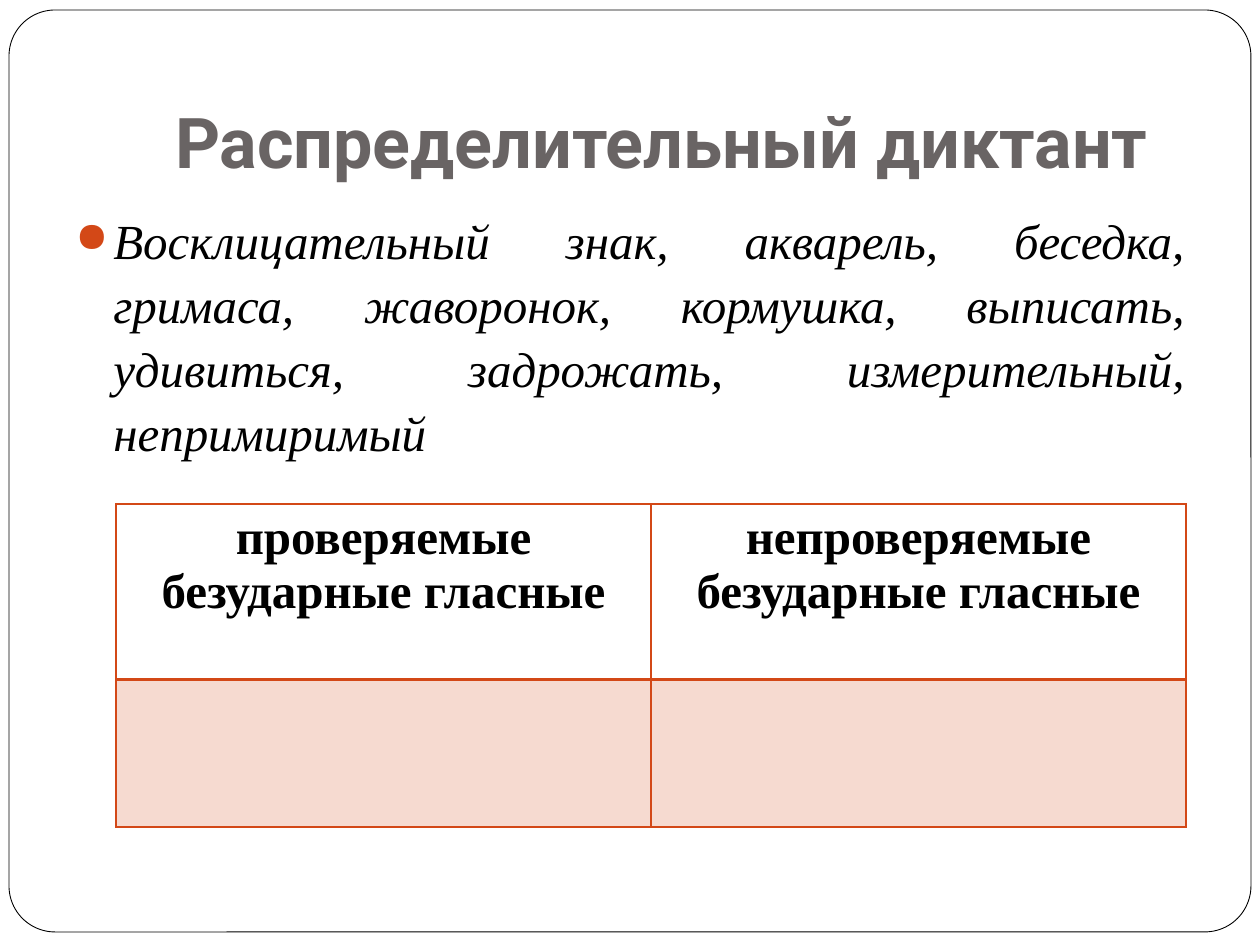
import pptx
import pptx.util
import pptx.dml.color
import pptx.enum.shapes
import pptx.enum.text
import pptx.oxml
import pptx.oxml.ns

TITLE = "Распределительный диктант"
WORDS = ("Восклицательный знак, акварель, беседка, гримаса, жаворонок, "
         "кормушка, выписать, удивиться, задрожать, измерительный, непримиримый")
HEADERS = ["проверяемые безударные гласные", "непроверяемые безударные гласные"]

ACCENT, GREY, BLACK, WHITE = "D34817", "696464", "000000", "FFFFFF"
SERIF = "Times New Roman"
ROW_HEIGHTS = [176, 147]
COLUMN_WIDTH = 535
ALIGN = pptx.enum.text.PP_ALIGN


def px(count):
    return pptx.util.Emu(round(count * 914400 / 126))


def color(value):
    return pptx.dml.color.RGBColor.from_string(value)


def element(tag, content="", **attributes):
    listed = "".join(f' {name}="{value}"' for name, value in attributes.items())
    namespace = pptx.oxml.ns.nsdecls("a")
    return pptx.oxml.parse_xml(f"<a:{tag} {namespace}{listed}>{content}</a:{tag}>")


def write(frame, text, align, size, font, ink, bold=False, italic=False):
    frame.word_wrap = True
    paragraph = frame.paragraphs[0]
    paragraph.alignment = align
    run = paragraph.add_run()
    run.text = text
    run.font.size = pptx.util.Pt(size)
    run.font.name = font
    run.font.color.rgb = color(ink)
    run.font.bold, run.font.italic = bold, italic
    return paragraph


def set_borders(cell, bottom):
    properties = cell._tc.get_or_add_tcPr()
    fill = f'<a:solidFill><a:srgbClr val="{ACCENT}"/></a:solidFill>'
    widths = {"lnL": 1, "lnR": 1, "lnT": 1, "lnB": bottom}
    for position, (side, width) in enumerate(widths.items()):
        properties.insert(position, element(side, fill, w=pptx.util.Pt(width)))


presentation = pptx.Presentation()
presentation.slide_width, presentation.slide_height = px(1260), px(945)
slide = presentation.slides.add_slide(presentation.slide_layouts[6])

# Rounded frame
frame = slide.shapes.add_shape(pptx.enum.shapes.MSO_SHAPE.ROUNDED_RECTANGLE,
                               px(9), px(10), px(1242), px(922))
frame.adjustments[0] = 0.05
frame.shadow.inherit = False
frame.fill.solid()
frame.fill.fore_color.rgb = color(WHITE)
frame.line.color.rgb = color(BLACK)
frame.line.width = pptx.util.Pt(0.5)

# Title
title = slide.shapes.add_textbox(px(126), px(38), px(1071), px(157)).text_frame
title.vertical_anchor = pptx.enum.text.MSO_ANCHOR.BOTTOM
title.margin_bottom = px(13)
write(title, TITLE, ALIGN.CENTER, 40, "Roboto", GREY, bold=True)

# Bulleted words
body = slide.shapes.add_textbox(px(63), px(199), px(1134), px(630)).text_frame
paragraph = write(body, WORDS, ALIGN.JUSTIFY, 28, SERIF, BLACK, italic=True)
paragraph.line_spacing = 1.09
paragraph.space_before = pptx.util.Pt(6)
properties = paragraph._p.get_or_add_pPr()
properties.set("marL", str(px(38)))
properties.set("indent", str(px(-38)))
properties.append(element("buClr", f'<a:srgbClr val="{ACCENT}"/>'))
properties.append(element("buSzPct", val=85000))
properties.append(element("buChar", char="●"))

# Table: headers above empty tinted cells
table = slide.shapes.add_table(len(ROW_HEIGHTS), len(HEADERS), px(116), px(504),
                               px(COLUMN_WIDTH * len(HEADERS)), px(sum(ROW_HEIGHTS))).table
for row, height in zip(table.rows, ROW_HEIGHTS):
    row.height = px(height)
for index, header in enumerate(HEADERS):
    table.columns[index].width = px(COLUMN_WIDTH)
    top, bottom = table.cell(0, index), table.cell(1, index)
    top.fill.background()
    write(top.text_frame, header, ALIGN.CENTER, 28, SERIF, BLACK, bold=True)
    bottom.fill.solid()
    bottom.fill.fore_color.rgb = color(ACCENT)
    tint = bottom._tc.tcPr.find(".//" + pptx.oxml.ns.qn("a:srgbClr"))
    tint.append(element("alpha", val=20000))
    set_borders(top, bottom=2)
    set_borders(bottom, bottom=1)
    bottom._tc.tcPr.find(pptx.oxml.ns.qn("a:lnT")).set("w", str(pptx.util.Pt(2)))

presentation.save("out.pptx")
